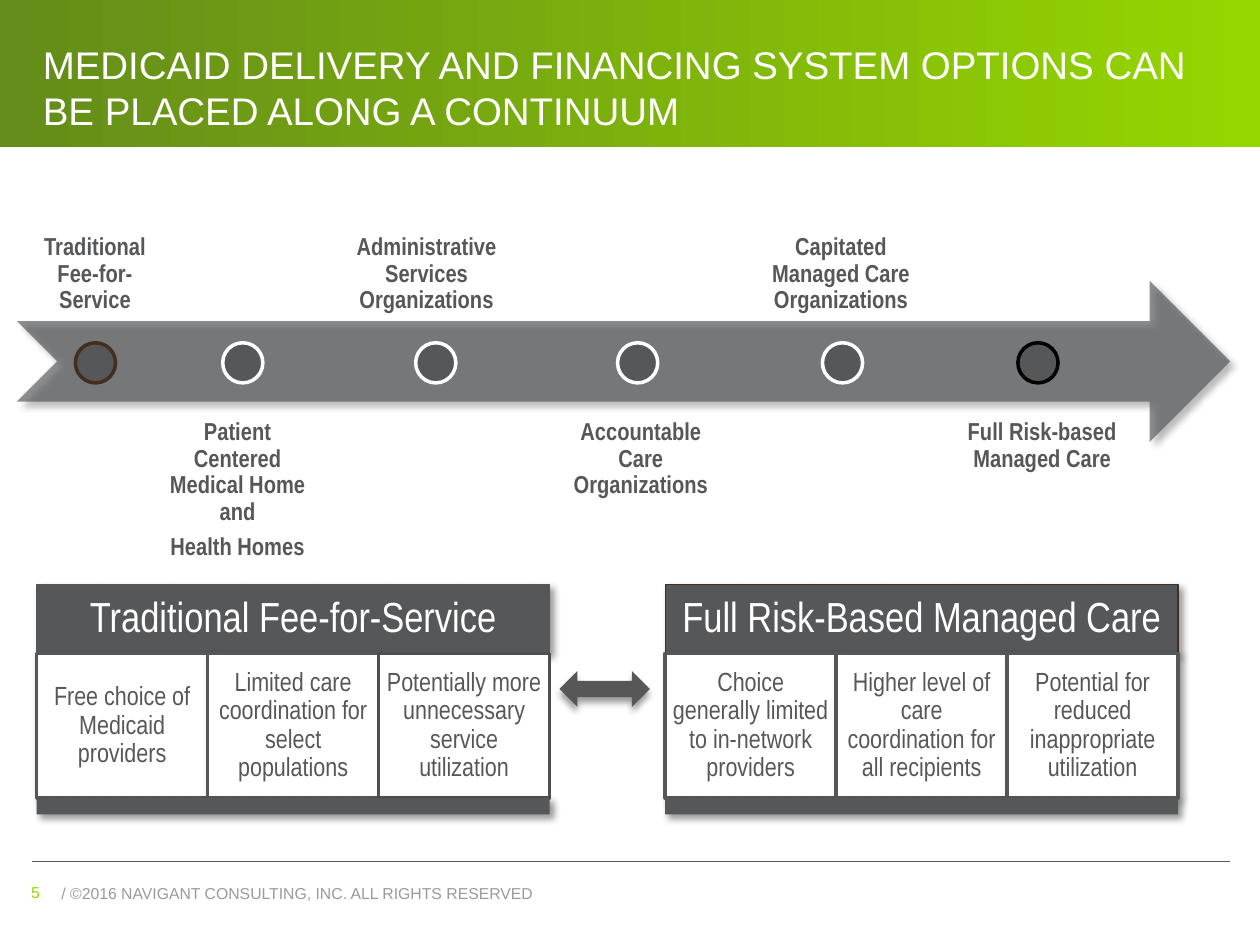
from dataclasses import dataclass

from lxml.etree import SubElement
from pptx import Presentation
from pptx.dml.color import RGBColor
from pptx.enum.shapes import MSO_CONNECTOR, MSO_SHAPE
from pptx.enum.text import MSO_ANCHOR, MSO_AUTO_SIZE, PP_ALIGN
from pptx.oxml.ns import qn
from pptx.util import Cm, Pt


@dataclass(frozen=True)
class Theme:
    dark: str = "555759"
    edge: str = "4D4F51"
    brown: str = "422F20"
    black: str = "000000"
    white: str = "FFFFFF"
    gray: str = "989A9D"
    lime: str = "95D600"
    moss: str = "648C1A"
    sans: str = "Arial"
    slim: str = "Arial Narrow"
    title: int = 22
    head: int = 24
    cell: int = 15
    label: int = 14
    foot: int = 9


LOOK = Theme()


def rgb(code):
    return RGBColor.from_string(code)


def put(item, form):
    """Set each format value on the item."""
    for name, value in form.items():
        setattr(item, name, value)


def place(item, box):
    names = ("left", "top", "width", "height")
    put(item, dict(zip(names, map(Cm, box))))


def write(shape, lines, size, color, font=LOOK.slim, bold=False, inset=None,
          anchor=MSO_ANCHOR.TOP, align=PP_ALIGN.CENTER, lead=0.9):
    """Fill a shape with formatted paragraphs."""
    frame = shape.text_frame
    put(frame, {"word_wrap": True, "auto_size": MSO_AUTO_SIZE.NONE,
                "vertical_anchor": anchor})
    if inset is not None:
        sides = ("left", "top", "right", "bottom")
        put(frame, {f"margin_{side}": Cm(inset) for side in sides})
    frame.text = "\n".join(lines)
    for para in frame.paragraphs:
        put(para, {"alignment": align, "line_spacing": lead,
                   "space_before": Pt(0), "space_after": Pt(0.35 * size)})
        for run in para.runs:
            put(run.font, {"name": font, "size": Pt(size), "bold": bold})
            run.font.color.rgb = rgb(color)


def shade(shape, turn=45):
    """Give a shape a soft outer shadow."""
    glow = SubElement(shape.element.spPr.find(qn("a:effectLst")),
                      qn("a:outerShdw"), blurRad=str(Pt(4)),
                      dist=str(Pt(3)), dir=str(turn * 60000), rotWithShape="0")
    tint = SubElement(glow, qn("a:srgbClr"), val=LOOK.black)
    SubElement(tint, qn("a:alpha"), val="40000")


def draw(home, kind, box, fill=LOOK.dark, line=None, width=2.0, turn=None):
    """Add a preset shape, with a shadow when a turn is given."""
    shape = home.add_shape(kind, *map(Cm, box))
    shape.shadow.inherit = False
    shape.fill.solid()
    shape.fill.fore_color.rgb = rgb(fill)
    if line:
        shape.line.color.rgb = rgb(line)
        shape.line.width = Pt(width)
    else:
        shape.line.fill.background()
    if turn is not None:
        shade(shape, turn)
    return shape


def note(home, box, lines, size, color, **form):
    write(home.add_textbox(*map(Cm, box)), lines, size, color, **form)


def banner(slide):
    """Green band with the title on it."""
    band = draw(slide.shapes, MSO_SHAPE.RECTANGLE, (0, 0, 25.4, 2.97))
    band.fill.gradient()
    band.fill.gradient_angle = 0
    for stop, code in zip(band.fill.gradient_stops, (LOOK.moss, LOOK.lime)):
        stop.color.rgb = rgb(code)
    title = slide.shapes.title
    place(title, (0.61, 0, 24.2, 2.82))
    write(title, ["MEDICAID DELIVERY AND FINANCING SYSTEM OPTIONS CAN "
                  "BE PLACED ALONG A CONTINUUM"], LOOK.title, LOOK.white,
          font=LOOK.sans, anchor=MSO_ANCHOR.BOTTOM, align=PP_ALIGN.LEFT,
          lead=1.0)
    # The title stands in front of the band
    slide.shapes.element.append(title.element)


def footer(slide):
    """Rule, page number and rights line."""
    rule = slide.shapes.add_connector(
        MSO_CONNECTOR.STRAIGHT, Cm(0.64), Cm(17.37), Cm(24.79), Cm(17.37))
    rule.line.color.rgb = rgb(LOOK.dark)
    rule.line.width = Pt(0.75)
    SubElement(rule.element.spPr, qn("a:effectLst"))
    form = {"font": LOOK.sans, "align": PP_ALIGN.LEFT, "lead": 1.0}
    note(slide.shapes, (0.99, 17.7, 16.18, 0.56),
         ["/ ©2016 NAVIGANT CONSULTING, INC. ALL RIGHTS RESERVED"],
         LOOK.foot, LOOK.gray, **form)
    note(slide.shapes, (0.38, 17.68, 1.73, 0.58), ["5"],
         LOOK.foot, LOOK.lime, **form)


def panel(slide, left, head, cells, rim, last, turn):
    """Heading, three cells and a base bar; the last cell has its own style."""
    wide, top, tall = 10.34, 13.17, 2.92
    home = slide.shapes.add_group_shape().shapes
    bar = draw(home, MSO_SHAPE.RECTANGLE, (left, 11.78, wide, 1.4),
               line=rim, width=0.75, turn=45)
    write(bar, [head], LOOK.head, LOOK.white, inset=0.25,
          anchor=MSO_ANCHOR.MIDDLE)
    step = wide / len(cells)
    for i, text in enumerate(cells):
        final = i == len(cells) - 1
        cell = draw(home, MSO_SHAPE.RECTANGLE,
                    (left + i * step, top, step, tall), LOOK.white,
                    last if final else LOOK.dark, turn=turn if final else 45)
        write(cell, [text], LOOK.cell, LOOK.dark, inset=0.15,
              anchor=MSO_ANCHOR.MIDDLE)
    draw(home, MSO_SHAPE.RECTANGLE, (left, top + tall, wide, 0.33), turn=45)


def track(slide, stops):
    """Long arrow with dots, labels by turns above and below."""
    home = slide.shapes.add_group_shape().shapes
    arrow = draw(home, MSO_SHAPE.NOTCHED_RIGHT_ARROW,
                 (0.34, 5.66, 24.46, 3.25), turn=45)
    tint = arrow.element.spPr.find(qn("a:solidFill"))[0]
    SubElement(tint, qn("a:alpha"), val="67000")
    for i, (left, wide, dot, ring, lines) in enumerate(stops):
        top = 8.18 if i % 2 else 4.45
        note(home, (left, top, wide, 3.25), lines, LOOK.label, LOOK.dark,
             bold=True, inset=0.28)
        draw(home, MSO_SHAPE.OVAL, (dot, 6.91, 0.81, 0.81), line=ring)


def main():
    deck = Presentation()
    put(deck, {"slide_width": Cm(25.4), "slide_height": Cm(19.05)})
    slide = deck.slides.add_slide(deck.slide_layouts[5])
    banner(slide)
    footer(slide)

    # Two ends of the range, with an arrow between
    panel(slide, 0.74, "Traditional Fee-for-Service",
          ["Free choice of Medicaid providers",
           "Limited care coordination for select populations",
           "Potentially more unnecessary service utilization"],
          LOOK.dark, LOOK.edge, None)
    panel(slide, 13.41, "Full Risk-Based Managed Care",
          ["Choice generally limited to in-network providers",
           "Higher level of care coordination for all recipients",
           "Potential for reduced inappropriate utilization"],
          LOOK.brown, LOOK.dark, 45)
    link = draw(slide.shapes, MSO_SHAPE.LEFT_RIGHT_ARROW,
                (11.28, 13.53, 1.82, 0.72), turn=90)
    link.adjustments[0] = 0.45

    # Label left and width, dot left, ring colour, text
    track(slide, [
        (0.34, 3.15, 1.52, LOOK.brown, ["Traditional Fee-for-Service"]),
        (2.9, 3.78, 4.49, LOOK.white,
         ["Patient Centered Medical Home and", "Health Homes"]),
        (6.76, 3.68, 8.38, LOOK.white,
         ["Administrative Services Organizations"]),
        (11.27, 3.3, 12.45, LOOK.white, ["Accountable Care Organizations"]),
        (15.01, 3.89, 16.58, LOOK.white,
         ["Capitated Managed Care Organizations"]),
        (19.08, 3.86, 20.52, LOOK.black, ["Full Risk-based Managed Care"]),
    ])
    deck.save("out.pptx")


if __name__ == "__main__":
    main()
